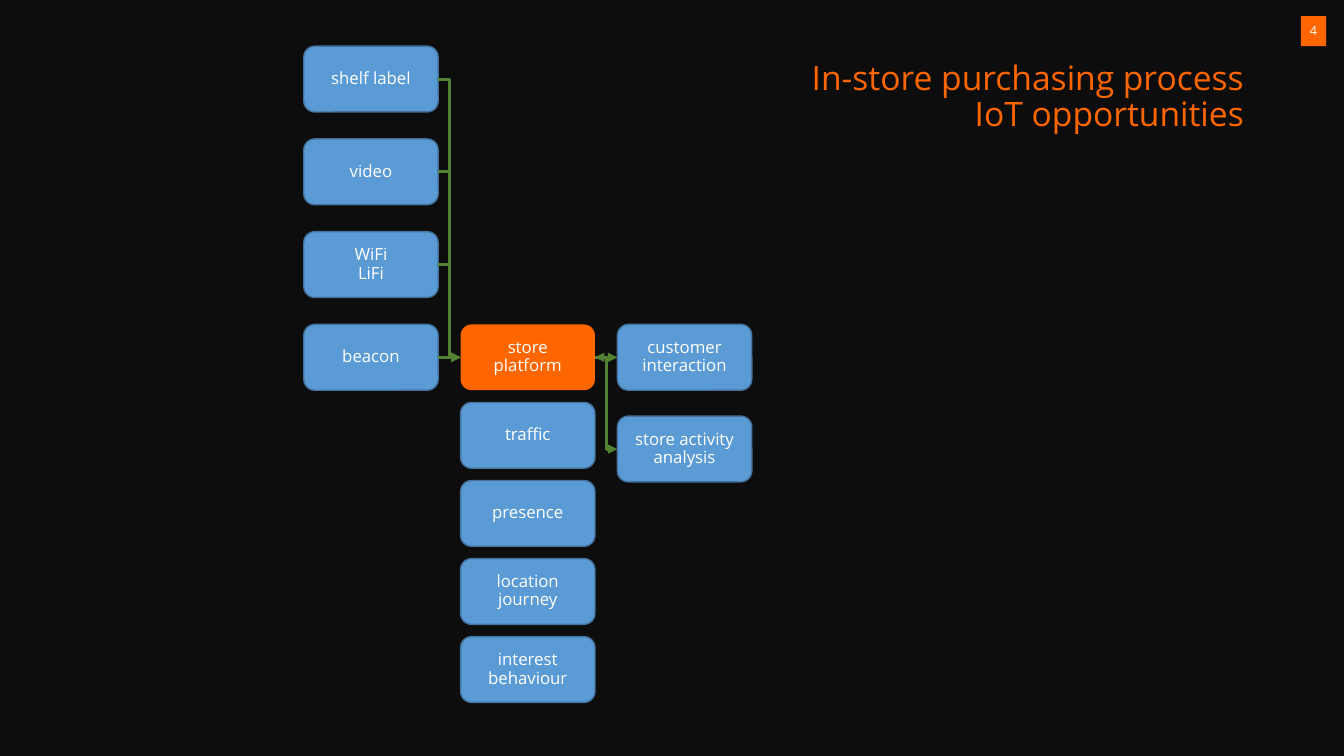
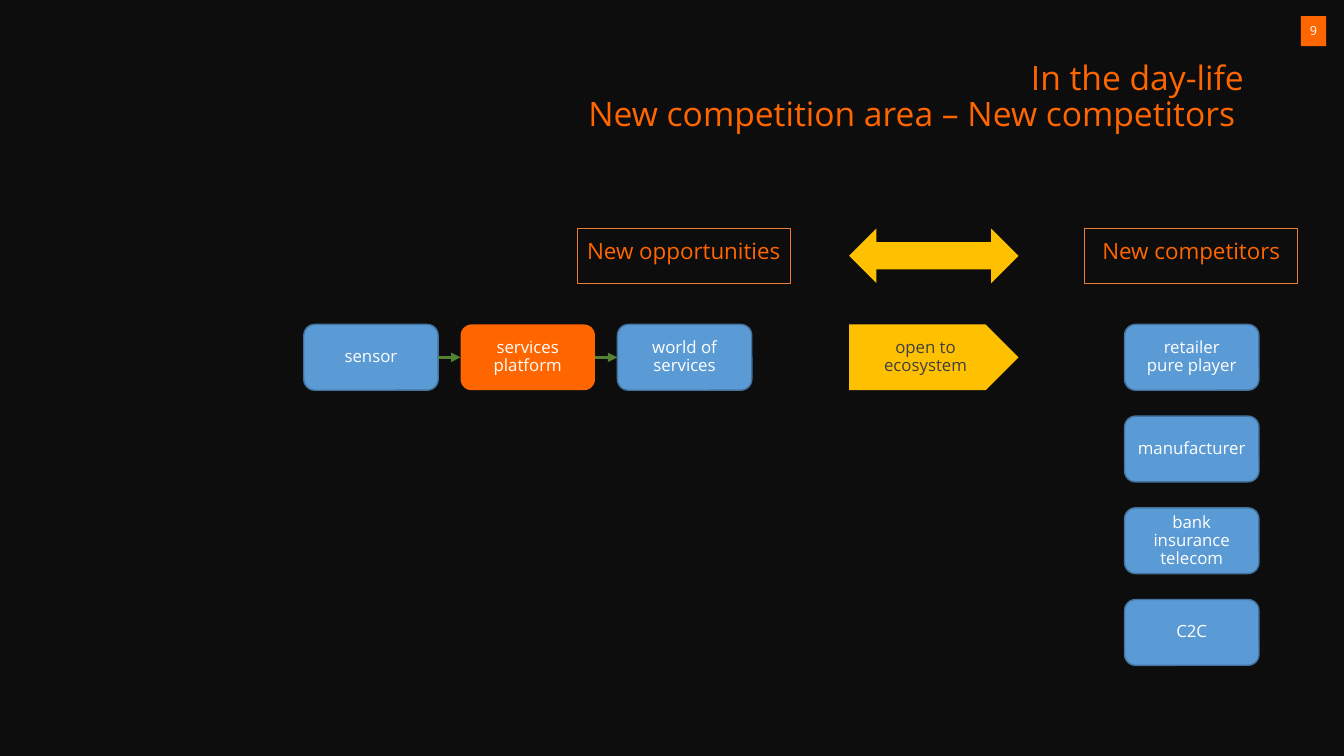
from lxml.etree import SubElement
from pptx import Presentation
from pptx.dml.color import RGBColor
from pptx.enum.shapes import MSO_CONNECTOR as CONN, MSO_SHAPE as SHAPE
from pptx.enum.text import MSO_ANCHOR as ANCHOR, MSO_AUTO_SIZE as AUTO, PP_ALIGN as ALIGN
from pptx.oxml.ns import qn
from pptx.util import Pt

# Shared style
rgb = RGBColor.from_string
FONT = "Open Sans"
BLACK, WHITE, GREY = "0D0D0D", "FFFFFF", "404040"
ORANGE, BLUE, BLUE_EDGE = "FF6600", "5B9BD5", "43739E"
YELLOW, GREEN, LABEL_EDGE = "FFC000", "548235", "ED7D31"

# Diagram grid
BOX_W, BOX_H = 96, 47
SENSOR_X, PLATFORM_X, SERVICE_X = [217 + 112 * i for i in range(3)]
MAIN_Y = 231.75
SENSOR_STEP, TOPIC_STEP, SERVICE_STEP = 66.25, 55.75, 65.5


def box(s, x, y, text, fill=BLUE, edge=BLUE_EDGE, w=BOX_W, h=BOX_H,
        kind=SHAPE.ROUNDED_RECTANGLE, color=WHITE, size=12, inset=3):
    sp = s.shapes.add_shape(kind, Pt(x), Pt(y), Pt(w), Pt(h))
    sp.shadow.inherit = False
    if fill:
        sp.fill.solid()
        sp.fill.fore_color.rgb = rgb(fill)
    else:
        sp.fill.background()
    if edge:
        sp.line.color.rgb = rgb(edge)
        sp.line.width = Pt(1)
    else:
        sp.line.fill.background()
    tf = sp.text_frame
    tf.text = text
    tf.word_wrap = True
    tf.vertical_anchor = ANCHOR.MIDDLE
    tf.margin_left = tf.margin_right = Pt(inset)
    tf.margin_top = tf.margin_bottom = Pt(3)
    for p in tf.paragraphs:
        p.alignment = ALIGN.CENTER
        p.line_spacing = 0.9
        for r in p.runs:
            r.font.name = FONT
            r.font.size = Pt(size)
            r.font.color.rgb = rgb(color)
    return sp


def link(s, left, right, kind=CONN.STRAIGHT, ends=("tailEnd",)):
    c = s.shapes.add_connector(kind, 0, 0, 0, 0)
    c.begin_connect(left, 3)
    c.end_connect(right, 1)
    c.line.color.rgb = rgb(GREEN)
    c.line.width = Pt(2.25)
    ln = c.line._get_or_add_ln()
    for end in ends:
        SubElement(ln, qn("a:" + end), type="triangle")
    SubElement(ln.getparent(), qn("a:effectLst"))


prs = Presentation()
prs.slide_width, prs.slide_height = Pt(960), Pt(540)
bg = prs.slide_master.background.fill
bg.solid()
bg.fore_color.rgb = rgb(BLACK)

# Titles and page numbers
slides = []
for title, number in [
    ("In-store purchasing process\nIoT opportunities", "4"),
    ("In the day-life\nNew competition area – New competitors ", "9"),
]:
    s = prs.slides.add_slide(prs.slide_layouts[5])
    slides.append(s)
    sp = s.shapes.title
    sp.left, sp.top, sp.width, sp.height = Pt(35.25), Pt(40.25), Pt(860.5), Pt(65.5)
    tf = sp.text_frame
    tf.text = title
    tf.word_wrap = True
    tf.auto_size = AUTO.NONE
    tf.vertical_anchor = ANCHOR.TOP
    for p in tf.paragraphs:
        p.alignment = ALIGN.RIGHT
        p.line_spacing = 0.9
        for r in p.runs:
            r.font.name = FONT
            r.font.size = Pt(24)
            r.font.color.rgb = rgb(ORANGE)
    box(s, 929.25, 11.5, number, ORANGE, None, 18, 21.5, SHAPE.RECTANGLE, size=9, inset=0)

# Slide 1: store platform with its sensors, topics and services
s = slides[0]
platform = box(s, PLATFORM_X, MAIN_Y, "store platform", ORANGE, None, inset=7)
for i, text in enumerate(["traffic", "presence", "location\njourney", "interest\nbehaviour"], 1):
    box(s, PLATFORM_X, MAIN_Y + i * TOPIC_STEP, text)
for i, text in enumerate(["beacon", "WiFi\nLiFi", "video", "shelf label"]):
    sensor = box(s, SENSOR_X, MAIN_Y - i * SENSOR_STEP, text)
    link(s, sensor, platform, CONN.ELBOW if i else CONN.STRAIGHT)
customer = box(s, SERVICE_X, MAIN_Y, "customer interaction")
analysis = box(s, SERVICE_X, MAIN_Y + SERVICE_STEP, "store activity analysis")
link(s, platform, customer, ends=("headEnd", "tailEnd"))
link(s, platform, analysis, CONN.ELBOW)

# Slide 2: chain from sensor to services
s = slides[1]
sensor = box(s, SENSOR_X, MAIN_Y, "sensor")
platform = box(s, PLATFORM_X, MAIN_Y, "services platform", ORANGE, None, inset=7)
services = box(s, SERVICE_X, MAIN_Y, "world of services")
link(s, sensor, platform)
link(s, platform, services)

# Competitors
competitors = ["retailer\npure player", "manufacturer", "bank\ninsurance\ntelecom", "C2C"]
for i, text in enumerate(competitors):
    box(s, 803.25, MAIN_Y + i * SERVICE_STEP, text)

# Headings and yellow arrows
HEAD_Y, HEAD_H = 163.25, 39
for x, text in [(412.5, "New opportunities"), (775, "New competitors")]:
    sp = box(s, x, HEAD_Y, text, None, LABEL_EDGE, 152, HEAD_H, SHAPE.RECTANGLE,
             ORANGE, 16, 7)
    sp.line.width = Pt(0.75)
    sp.text_frame.word_wrap = False
    sp.text_frame.vertical_anchor = ANCHOR.TOP
    sp.text_frame.margin_top = Pt(8.5)
box(s, 606.5, HEAD_Y, "", YELLOW, None, 121, HEAD_H, SHAPE.LEFT_RIGHT_ARROW)
box(s, 606.5, MAIN_Y, "open to ecosystem", YELLOW, None, 121, BOX_H, SHAPE.PENTAGON,
    GREY, inset=7)

prs.save("out.pptx")
